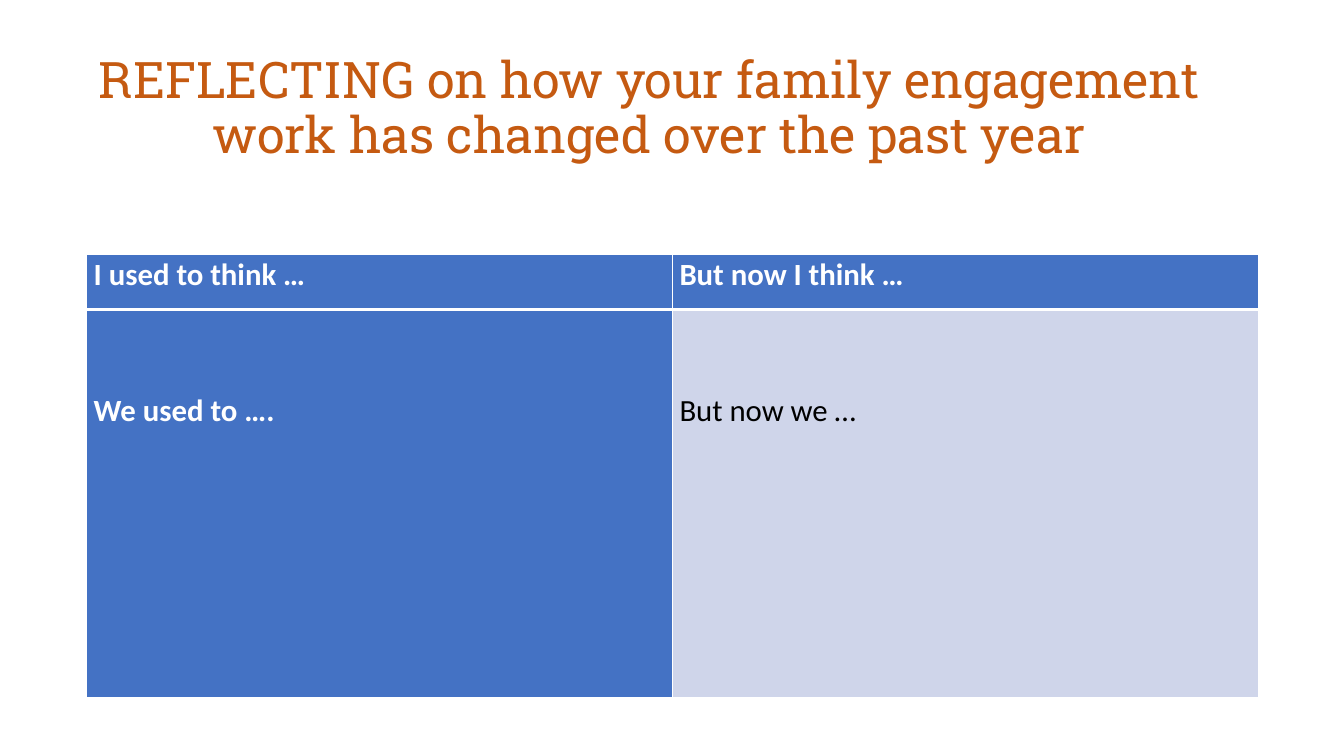
from pptx import Presentation
from pptx.dml.color import RGBColor
from pptx.enum.text import MSO_ANCHOR, PP_ALIGN
from pptx.oxml import parse_xml
from pptx.oxml.ns import nsdecls
from pptx.util import Inches, Pt

TOP = MSO_ANCHOR.TOP
CENTER = PP_ALIGN.CENTER
TITLE_ONLY = 5

WHITE, BLACK = "FFFFFF", "000000"
BLUE, PALE, ORANGE = "4472C4", "CFD5EA", "C55A11"

TITLE = "REFLECTING on how your family engagement work has changed over the past year"
ROW_HEIGHTS = (0.55, 3.85)
ROW_TOP_MARGINS = (0, 0.8)
ROW_BORDERS = (
    {"lnL": 1, "lnR": 1, "lnT": 1, "lnB": 3},
    {"lnL": 1, "lnR": 1, "lnT": 3, "lnB": 1},
)
CELLS = (
    (("I used to think …", BLUE, WHITE, True), ("But now I think …", BLUE, WHITE, True)),
    (("We used to ….", BLUE, WHITE, True), ("But now we …", PALE, BLACK, False)),
)


def color(value):
    return RGBColor.from_string(value)


def set_values(target, values):
    for name, value in values.items():
        setattr(target, name, value)


def format_font(font, name, size, ink, bold=False):
    set_values(font, {"name": name, "size": Pt(size), "bold": bold})
    font.color.rgb = color(ink)


def add_title(page, left, top, width, height):
    title = page.shapes.title
    set_values(title, {"left": Inches(left), "top": Inches(top),
                       "width": Inches(width), "height": Inches(height)})
    frame = title.text_frame
    frame.text = TITLE
    set_values(frame, {"word_wrap": True, "vertical_anchor": TOP})
    para = frame.paragraphs[0]
    set_values(para, {"alignment": CENTER, "line_spacing": 0.9})
    format_font(para.runs[0].font, "Roboto Slab", 36, ORANGE)


def add_borders(cell, borders):
    properties = cell._tc.get_or_add_tcPr()
    for side, width in borders.items():
        properties.append(parse_xml(
            f'<a:{side} {nsdecls("a")} w="{Pt(width)}"><a:solidFill>'
            f'<a:srgbClr val="{WHITE}"/></a:solidFill></a:{side}>'))


def fill_cell(cell, content, top_margin, borders):
    text, fill, ink, bold = content
    add_borders(cell, borders)
    cell.fill.solid()
    cell.fill.fore_color.rgb = color(fill)
    set_values(cell, {"margin_left": Inches(0.07), "margin_right": Inches(0.07),
                      "margin_top": Inches(top_margin), "margin_bottom": 0,
                      "vertical_anchor": TOP})
    cell.text = text
    para = cell.text_frame.paragraphs[0]
    para.line_spacing = 1.07
    format_font(para.runs[0].font, "Calibri", 22, ink, bold)


def add_reflection_table(page, left, top, width, height):
    table = page.shapes.add_table(
        len(CELLS), len(CELLS[0]), Inches(left), Inches(top),
        Inches(width), Inches(height)).table
    for column in table.columns:
        column.width = Inches(width / len(CELLS[0]))
    for row_index, contents in enumerate(CELLS):
        table.rows[row_index].height = Inches(ROW_HEIGHTS[row_index])
        for column_index, content in enumerate(contents):
            fill_cell(table.cell(row_index, column_index), content,
                      ROW_TOP_MARGINS[row_index], ROW_BORDERS[row_index])


def main():
    deck = Presentation()
    set_values(deck, {"slide_width": Inches(13.33), "slide_height": Inches(7.5)})
    page = deck.slides.add_slide(deck.slide_layouts[TITLE_ONLY])
    add_title(page, 0.86, 0.5, 11.16, 1.92)
    add_reflection_table(page, 0.86, 2.52, 11.62, sum(ROW_HEIGHTS))
    deck.save("out.pptx")


if __name__ == "__main__":
    main()
